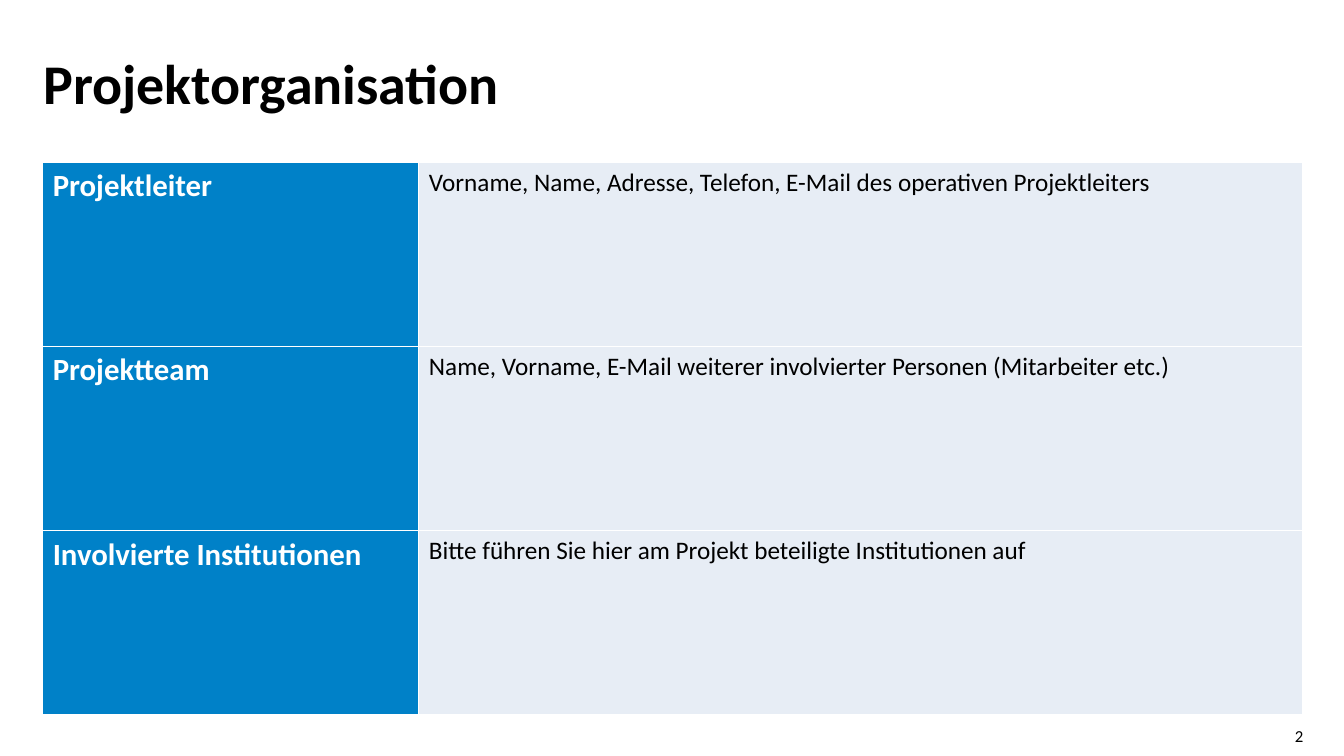
from lxml import etree
from pptx import Presentation
from pptx.dml.color import RGBColor
from pptx.enum.text import MSO_ANCHOR, PP_ALIGN
from pptx.oxml.ns import qn
from pptx.util import Pt

TOP, MIDDLE = MSO_ANCHOR.TOP, MSO_ANCHOR.MIDDLE
LEFT, RIGHT = PP_ALIGN.LEFT, PP_ALIGN.RIGHT
FONT = "Calibri"
BLACK, WHITE, BLUE, PALE = "000000", "FFFFFF", "0081C8", "E7EDF5"
COL_WIDTHS = (268.7, 631.3)
ROW_HEIGHT = 131.6
ROWS = (
    ("Projektleiter",
     "Vorname, Name, Adresse, Telefon, E-Mail des operativen Projektleiters"),
    ("Projektteam",
     "Name, Vorname, E-Mail weiterer involvierter Personen (Mitarbeiter etc.)"),
    ("Involvierte Institutionen",
     "Bitte führen Sie hier am Projekt beteiligte Institutionen auf"),
)


def rgb(color):
    """Turn a hex string into a colour."""
    return RGBColor.from_string(color)


def add_run(p, text, size, color, bold=False):
    """Append a formatted run to a paragraph."""
    r = p.add_run()
    r.text = text
    r.font.name = FONT
    r.font.size = Pt(size)
    r.font.bold = bold
    r.font.color.rgb = rgb(color)


def add_text(s, box, text, size, bold=False, align=LEFT, anchor=TOP, spacing=1.0):
    """Add a text box without insets."""
    sp = s.shapes.add_textbox(*map(Pt, box))
    tf = sp.text_frame
    tf.word_wrap = True
    tf.vertical_anchor = anchor
    tf.margin_left = tf.margin_top = tf.margin_right = tf.margin_bottom = 0
    p = tf.paragraphs[0]
    p.alignment = align
    p.line_spacing = spacing
    add_run(p, text, size, BLACK, bold)


def set_borders(cell, color, width):
    """Draw a solid line on all four sides of a cell."""
    tcPr = cell._tc.get_or_add_tcPr()
    for i, side in enumerate(("a:lnL", "a:lnR", "a:lnT", "a:lnB")):
        ln = etree.Element(qn(side), w=str(Pt(width)))
        fill = etree.SubElement(ln, qn("a:solidFill"))
        etree.SubElement(fill, qn("a:srgbClr"), val=color)
        tcPr.insert(i, ln)


def fill_cell(cell, text, size, color, fill, bold):
    """Set the text, fill and borders of a cell."""
    cell.fill.solid()
    cell.fill.fore_color.rgb = rgb(fill)
    set_borders(cell, WHITE, 1)
    add_run(cell.text_frame.paragraphs[0], text, size, color, bold)


def add_organisation_table(s, left, top):
    """Add the table of roles and their descriptions."""
    table = s.shapes.add_table(
        len(ROWS), len(COL_WIDTHS), Pt(left), Pt(top),
        Pt(sum(COL_WIDTHS)), Pt(ROW_HEIGHT * len(ROWS))).table
    table.first_row = table.horz_banding = False
    for col, width in zip(table.columns, COL_WIDTHS):
        col.width = Pt(width)
    for i, (role, description) in enumerate(ROWS):
        table.rows[i].height = Pt(ROW_HEIGHT)
        fill_cell(table.cell(i, 0), role, 22, WHITE, BLUE, True)
        fill_cell(table.cell(i, 1), description, 18, BLACK, PALE, False)


def main():
    """Build and save the slide."""
    prs = Presentation()
    prs.slide_width, prs.slide_height = Pt(960), Pt(540)
    s = prs.slides.add_slide(prs.slide_layouts[6])
    add_text(s, (897, 518.4, 34, 14.4), "2", 12, align=RIGHT, anchor=MIDDLE)
    add_organisation_table(s, 30.5, 116)
    add_text(s, (31, 40.3, 720, 61.2), "Projektorganisation", 40, bold=True,
             spacing=0.9)
    prs.save("out.pptx")


if __name__ == "__main__":
    main()
